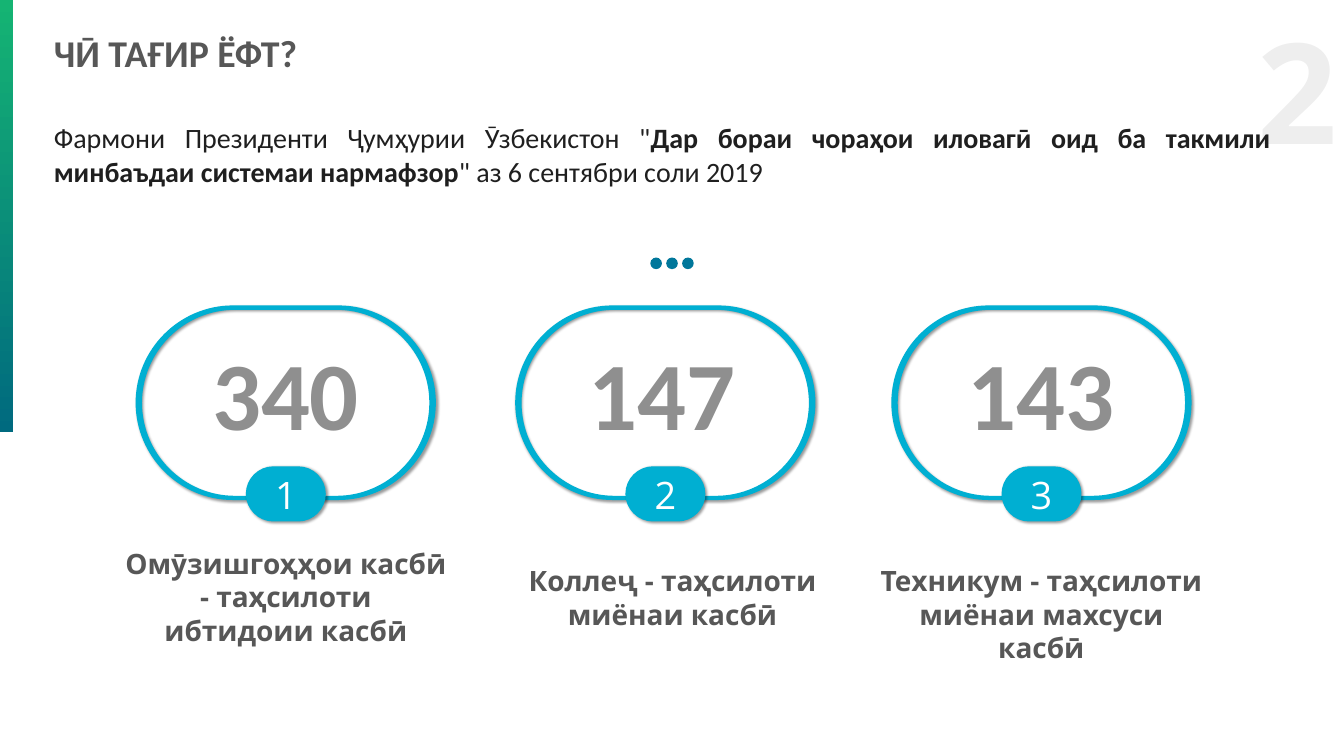
from dataclasses import dataclass

from lxml.etree import SubElement
from pptx import Presentation
from pptx.dml.color import RGBColor
from pptx.enum.shapes import MSO_SHAPE
from pptx.enum.text import MSO_ANCHOR, MSO_AUTO_SIZE, PP_ALIGN
from pptx.oxml.ns import qn
from pptx.shapes.base import BaseShape
from pptx.shapes.shapetree import GroupShapes, SlideShapes
from pptx.text.text import _Run as Run
from pptx.util import Pt

Shapes = SlideShapes | GroupShapes
Spot = tuple[float, float]

GREEN = RGBColor(0x15, 0xB4, 0x73)
TEAL = RGBColor(0x00, 0x6A, 0x7F)
BLUE = RGBColor(0x00, 0x77, 0x9B)
CYAN = RGBColor(0x00, 0xAF, 0xD2)
WHITE = RGBColor(0xFF, 0xFF, 0xFF)
INK = RGBColor(0x1F, 0x1F, 0x1F)
DARK = RGBColor(0x28, 0x28, 0x28)
SLATE = RGBColor(0x57, 0x57, 0x57)
GREY = RGBColor(0x8F, 0x8F, 0x8F)
BEND = 0.55


@dataclass(frozen=True)
class Box:
    """Hold a frame in points."""

    left: float
    top: float
    width: float
    height: float

    def size(self) -> tuple[Pt, Pt, Pt, Pt]:
        """Return the frame as lengths."""
        return Pt(self.left), Pt(self.top), Pt(self.width), Pt(self.height)


@dataclass(frozen=True)
class Style:
    """Hold the look of a run."""

    font: str
    size: float
    tint: RGBColor
    bold: bool = True


@dataclass(frozen=True)
class Card:
    """Describe one numbered count."""

    left: float
    count: str
    shift: float
    label: str
    place: Box


PAGE = Style("Open Sans", 200, DARK)
TITLE = Style("Calibri", 54, SLATE)
COUNT = Style("Calibri", 138, GREY)
LABEL = Style("Open Sans", 40, SLATE)
BADGE = Style("Open Sans", 54, WHITE, False)
PLAIN = Style("Calibri", 40, INK, False)
STRONG = Style("Calibri", 40, INK)

CARDS = [
    Card(193.7, "340", 78.5, "Омӯзишгоҳҳои касбӣ - таҳсилоти ибтидоии касбӣ",
         Box(168.5, 776.9, 479.5, 152.6)),
    Card(735.8, "147", 74.2, "Коллеҷ - таҳсилоти миёнаи касбӣ",
         Box(731.5, 801.4, 457.9, 104.4)),
    Card(1273, "143", 78.5, "Техникум - таҳсилоти миёнаи махсуси касбӣ",
         Box(1244.2, 801.4, 486, 104.4)),
]


def dress(run: Run, style: Style) -> None:
    """Apply a style to a run."""
    run.font.name = style.font
    run.font.size = Pt(style.size)
    run.font.bold = style.bold
    run.font.color.rgb = style.tint


def write(shapes: Shapes, box: Box, parts: list[tuple[str, Style]],
          align: PP_ALIGN = PP_ALIGN.LEFT, grow: bool = False) -> BaseShape:
    """Add a text box made of styled parts."""
    shape = shapes.add_textbox(*box.size())
    frame = shape.text_frame
    frame.word_wrap = True
    if grow:
        frame.auto_size = MSO_AUTO_SIZE.SHAPE_TO_FIT_TEXT
    line = frame.paragraphs[0]
    line.alignment = align
    for text, style in parts:
        run = line.add_run()
        run.text = text
        dress(run, style)
    return shape


def paint(shape: BaseShape, tint: RGBColor) -> None:
    """Give a shape a flat fill without line or shadow."""
    shape.shadow.inherit = False
    shape.fill.solid()
    shape.fill.fore_color.rgb = tint
    shape.line.fill.background()


def shade(shape: BaseShape) -> None:
    """Cast a soft shadow down and right."""
    group = shape._element.spPr.find(qn("a:effectLst"))
    cast = SubElement(group, qn("a:outerShdw"), blurRad=str(Pt(4)),
                      dist=str(Pt(3)), dir="2700000", algn="tl", rotWithShape="0")
    tint = SubElement(cast, qn("a:srgbClr"), val="000000")
    SubElement(tint, qn("a:alpha"), val="40000")


def blend(start: Spot, end: Spot, part: float) -> Spot:
    """Return the spot a part of the way along."""
    return tuple(a + (b - a) * part for a, b in zip(start, end))


def trace(box: Box) -> list[Spot]:
    """Return a pill as a start and triples of curve points."""
    half = box.height / 2
    right, low = box.left + box.width, box.top + box.height
    mid, near, far = box.top + half, box.left + half, right - half
    start = (far, box.top)
    turns = [
        ((right, box.top), (right, mid)),
        ((right, low), (far, low)),
        ((near, low), (near, low)),
        ((box.left, low), (box.left, mid)),
        ((box.left, box.top), (near, box.top)),
        (start, start),
    ]
    spots = [start]
    for knee, end in turns:
        spots += [blend(spots[-1], knee, BEND), blend(end, knee, BEND), end]
    return spots


def draw_pill(shapes: Shapes, *loops: list[Spot]) -> BaseShape:
    """Draw curved loops as one shaded shape."""
    first, *rest = [[(Pt(x), Pt(y)) for x, y in loop] for loop in loops]
    pen = shapes.build_freeform(*first[0])
    pen.add_line_segments(first[1:])
    for loop in rest:
        pen.move_to(*loop[0])
        pen.add_line_segments(loop[1:])
    pill = pen.convert_to_shape()
    lines = list(pill._element.iter(qn("a:lnTo")))
    for step in range(0, len(lines), 3):
        trio = lines[step:step + 3]
        curve = SubElement(trio[0].getparent(), qn("a:cubicBezTo"))
        trio[0].addprevious(curve)
        for line in trio:
            curve.append(line[0])
            line.getparent().remove(line)
    paint(pill, CYAN)
    shade(pill)
    return pill


def draw_ring(shapes: Shapes, left: float) -> None:
    """Draw a hollow pill."""
    outer = trace(Box(left, 436.3, 428.8, 278))
    inner = trace(Box(left + 9.1, 442.6, 410.4, 265.7))
    draw_pill(shapes, outer, inner[::-1])


def draw_badge(shapes: Shapes, left: float, text: str) -> None:
    """Draw the numbered pill under a ring."""
    badge = draw_pill(shapes, trace(Box(left + 157.4, 666.2, 114.2, 78.8)))
    frame = badge.text_frame
    frame.text = text
    frame.vertical_anchor = MSO_ANCHOR.MIDDLE
    frame.paragraphs[0].alignment = PP_ALIGN.CENTER
    dress(frame.paragraphs[0].runs[0], BADGE)


def draw_card(shapes: Shapes, card: Card, rank: int) -> None:
    """Draw a ring with its count, badge and label."""
    group = shapes.add_group_shape().shapes
    draw_ring(group, card.left)
    draw_badge(group, card.left, str(rank))
    spot = Box(card.left + card.shift, 473.8, 271.4, 162)
    write(group, spot, [(card.count, COUNT)], PP_ALIGN.CENTER)
    write(group, card.place, [(card.label, LABEL)], PP_ALIGN.CENTER, True)


def main() -> None:
    """Build the slide and save it."""
    deck = Presentation()
    deck.slide_width, deck.slide_height = Pt(1919.52), Pt(1080)
    shapes = deck.slides.add_slide(deck.slide_layouts[6]).shapes
    bar = shapes.add_shape(MSO_SHAPE.RECTANGLE, *Box(0, 0, 18.7, 617.8).size())
    paint(bar, GREEN)
    bar.fill.gradient()
    bar.fill.gradient_angle = 270
    for stop, tint in zip(bar.fill.gradient_stops, (GREEN, TEAL)):
        stop.color.rgb = tint
    page = write(shapes, Box(1759, 2.2, 158.4, 245.5), [("2", PAGE)], PP_ALIGN.RIGHT)
    for tint in page._element.iter(qn("a:srgbClr")):
        SubElement(tint, qn("a:alpha"), val="8000")
    dots = shapes.add_group_shape().shapes
    for step in range(3):
        spot = Box(928.8 + 22.7 * step, 367.9, 16.6, 16.6)
        paint(dots.add_shape(MSO_SHAPE.OVAL, *spot.size()), BLUE)
    write(shapes, Box(69.8, 38.9, 1044.7, 78.5), [("ЧӢ ТАҒИР ЁФТ?", TITLE)])
    for rank, card in enumerate(CARDS, 1):
        draw_card(shapes, card, rank)
    write(shapes, Box(69.8, 168.5, 1751.8, 104.4), [
        ('Фармони Президенти Ҷумҳурии Ӯзбекистон "', PLAIN),
        ("Дар бораи чораҳои иловагӣ оид ба такмили минбаъдаи системаи нармафзор", STRONG),
        ('" аз 6 сентябри соли 2019', PLAIN),
    ], PP_ALIGN.JUSTIFY, True)
    deck.save("out.pptx")


if __name__ == "__main__":
    main()
